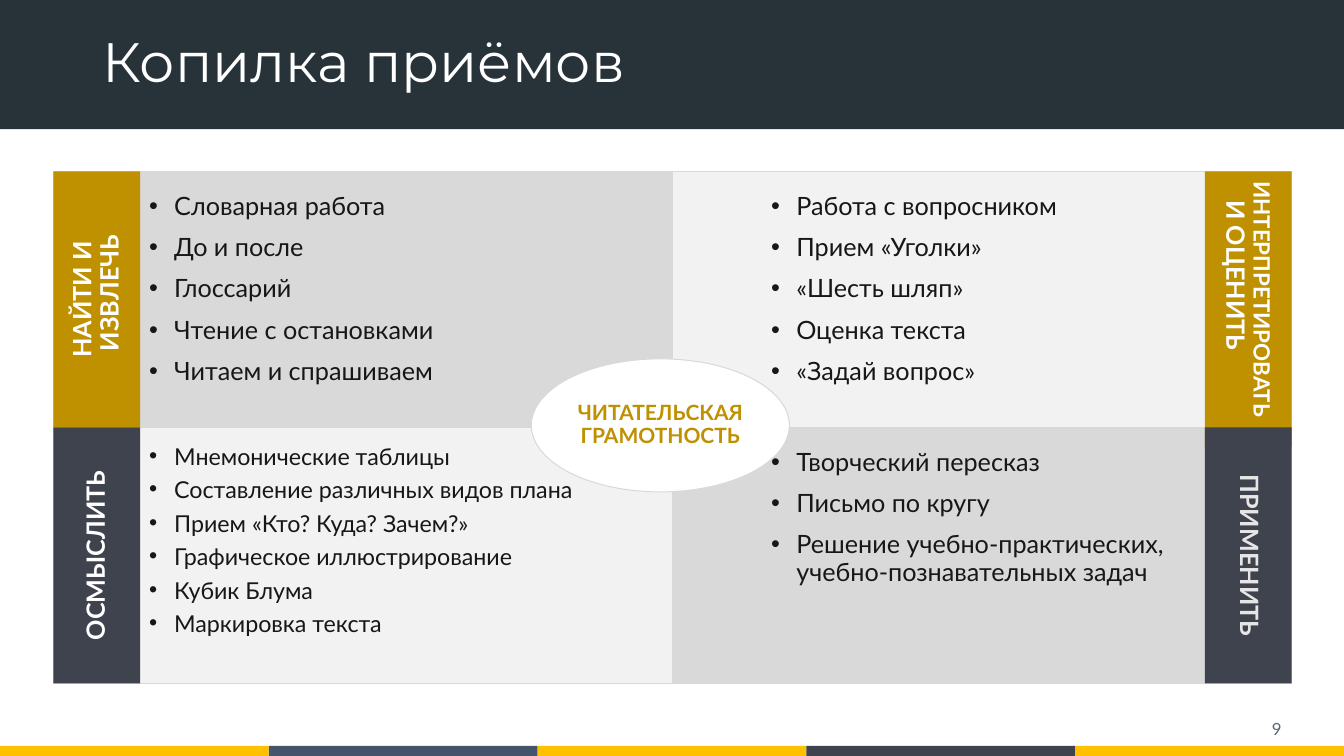
from pptx import Presentation
from pptx.dml.color import RGBColor as RGB
from pptx.enum.shapes import MSO_SHAPE as Shape
from pptx.enum.text import MSO_ANCHOR as Anchor, PP_ALIGN as Align
from pptx.oxml.ns import qn
from pptx.util import Inches, Pt
from lxml.etree import SubElement

HUES = {
    "dark": "273339", "gray": "D9D9D9", "pale": "F2F2F2", "white": "FFFFFF",
    "gold": "BF9000", "slate": "3F434D", "yellow": "FFC000", "blue": "44546A",
    "ink": "181717", "mist": "E7E6E6", "page": "576973",
}
QUADS = [
    (0, 0, "gray", 18, 0.9, ["Словарная работа", "До и после", "Глоссарий",
                             "Чтение с остановками", "Читаем и спрашиваем"]),
    (0, 1, "pale", 16.6, 0.7, ["Мнемонические таблицы", "Составление различных видов плана",
                               "Прием «Кто? Куда? Зачем?»", "Графическое иллюстрирование",
                               "Кубик Блума", "Маркировка текста"]),
    (1, 0, "pale", 18, 0.9, ["Работа с вопросником", "Прием «Уголки»", "«Шесть шляп»",
                             "Оценка текста", "«Задай вопрос»"]),
    (1, 1, "gray", 18, 0.9, ["Творческий пересказ", "Письмо по кругу",
                             "Решение учебно-практических, учебно-познавательных задач"]),
]
TABS = [
    (0, 0, 2.54, "gold", "white", Align.CENTER, [("НАЙТИ И ИЗВЛЕЧЬ ", 18)]),
    (0, 1, 2.54, "slate", "white", Align.CENTER, [("ОСМЫСЛИТЬ", 18)]),
    (1, 0, 2.73, "gold", "white", Align.LEFT, [("ИНТЕРПРЕТИРОВАТЬ", 16), (" И ОЦЕНИТЬ", 18)]),
    (1, 1, 2.54, "slate", "mist", Align.CENTER, [("ПРИМЕНИТЬ", 18)]),
]


def hue(name):
    """Return the named colour."""
    return RGB.from_string(HUES[name])


def add_form(slide, box, fill, kind=Shape.RECTANGLE, line=None, width=1):
    """Add a flat filled shape."""
    form = slide.shapes.add_shape(kind, *map(Inches, box))
    form.shadow.inherit = False
    form.fill.solid()
    form.fill.fore_color.rgb = hue(fill)
    if line:
        form.line.color.rgb = hue(line)
        form.line.width = Pt(width)
    else:
        form.line.fill.background()
    return form


def add_box(slide, box):
    """Add an empty text box."""
    return slide.shapes.add_textbox(*map(Inches, box))


def set_frame(form, anchor=Anchor.MIDDLE, pads=(0.1, 0.05, 0.1, 0.05)):
    """Set wrapping, anchor and insets, and return the text frame."""
    frame = form.text_frame
    frame.word_wrap = True
    frame.vertical_anchor = anchor
    (frame.margin_left, frame.margin_top,
     frame.margin_right, frame.margin_bottom) = map(Inches, pads)
    return frame


def set_para(para, runs, color, bold=False, font="Lato", align=Align.LEFT,
             pitch=0.9, gap=10, indent=0, bullet=False):
    """Fill a paragraph with runs of text and size."""
    para.alignment = align
    para.line_spacing = pitch
    para.space_before = Pt(gap)
    props = para._p.get_or_add_pPr()
    if indent:
        props.set("marL", str(Inches(indent)))
        props.set("indent", str(-Inches(indent)))
    if bullet:
        SubElement(props, qn("a:buFont")).set("typeface", "Arial")
        SubElement(props, qn("a:buChar")).set("char", "•")
    for text, size in runs:
        run = para.add_run()
        run.text = text
        run.font.size = Pt(size)
        run.font.name = font
        run.font.bold = bold
        run.font.color.rgb = hue(color)


def add_head(slide, box):
    """Draw the title band."""
    left, top, wide, high = box
    add_form(slide, box, "dark")
    frame = set_frame(add_box(slide, (left + 0.92, top + 0.28, wide - 1.83, high - 0.55)))
    set_para(frame.paragraphs[0], [("Копилка приёмов", 39.6)], "white",
             font="Montserrat", gap=0)


def add_foot(slide, box):
    """Draw the colour strip and the page number above it."""
    left, top, wide, high = box
    hues = ["yellow", "blue", "yellow", "slate", "yellow"]
    step = wide / len(hues)
    for i, fill in enumerate(hues):
        add_form(slide, (left + i * step, top, step, high), fill)
    frame = set_frame(add_box(slide, (left + wide - 3.52, top - 0.33, 3, 0.31)))
    set_para(frame.paragraphs[0], [("9", 12)], "page", align=Align.RIGHT, pitch=1, gap=0)


def add_tab(slide, box, turn, fill, color, align, runs):
    """Draw an upright label that fills the box once turned."""
    left, top, wide, high = box
    shift = (high - wide) / 2
    tab = add_form(slide, (left - shift, top + shift, high, wide), fill)
    tab.rotation = turn
    set_para(set_frame(tab).paragraphs[0], runs, color, bold=True, align=align, indent=0.19)


def add_list(slide, box, size, pitch, items):
    """Draw a bulleted list."""
    frame = set_frame(add_box(slide, box), Anchor.TOP, (0.1, 0.2, 0, 0.05))
    for i, item in enumerate(items):
        para = frame.add_paragraph() if i else frame.paragraphs[0]
        set_para(para, [(item, size)], "ink", pitch=pitch, indent=0.25, bullet=True)


def add_grid(slide, box):
    """Draw four quadrants with side tabs, lists and the central oval."""
    left, top, wide, high = box
    half, row, band = wide / 2, high / 2, 0.86
    for col, line, fill, *_ in QUADS:
        add_form(slide, (left + col * half, top + line * row, half, row), fill, line="gray")
    for col, line, tall, *style in TABS:
        spot = (left + col * (wide - band), top + line * row, band, tall)
        add_tab(slide, spot, 90 if col else 270, *style)
    for col, line, _, *style in QUADS:
        spot = (left + 0.85 + col * 6.17, top + 0.02 + line * row, 4.4, row - 0.02)
        add_list(slide, spot, *style)
    oval = add_form(slide, (left + 4.74, top + 1.86, 2.56, 1.32), "white",
                    Shape.OVAL, "gray", 0.75)
    frame = set_frame(oval, pads=(0, 0.05, 0, 0.05))
    set_para(frame.paragraphs[0], [("ЧИТАТЕЛЬСКАЯ ГРАМОТНОСТЬ", 15)], "gold",
             bold=True, align=Align.CENTER)


def main():
    """Build and save the slide."""
    deck = Presentation()
    deck.slide_width, deck.slide_height = Inches(13.33), Inches(7.5)
    slide = deck.slides.add_slide(deck.slide_layouts[6])
    add_head(slide, (0, -0.01, 13.33, 1.29))
    add_foot(slide, (0, 7.4, 13.33, 0.1))
    add_grid(slide, (0.53, 1.7, 12.28, 5.08))
    deck.save("out.pptx")


if __name__ == "__main__":
    main()
